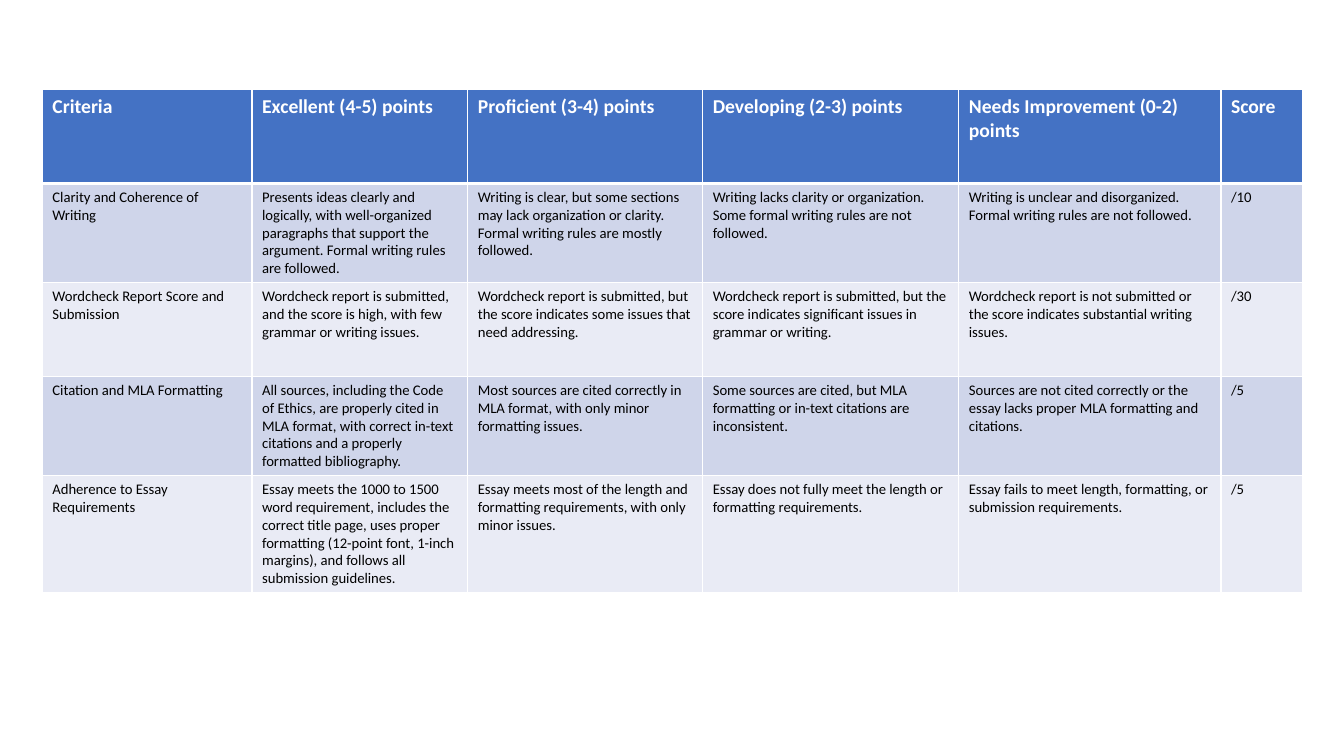
from dataclasses import dataclass

from lxml import etree
from pptx import Presentation
from pptx.dml.color import RGBColor
from pptx.oxml.ns import qn
from pptx.util import Inches, Pt

HEADER = ["Criteria", "Excellent (4-5) points", "Proficient (3-4) points",
          "Developing (2-3) points", "Needs Improvement (0-2) points", "Score"]
CRITERIA = [
    ["Clarity and Coherence of Writing",
     "Presents ideas clearly and logically, with well-organized paragraphs that "
     "support the argument. Formal writing rules are followed.",
     "Writing is clear, but some sections may lack organization or clarity. "
     "Formal writing rules are mostly followed.",
     "Writing lacks clarity or organization. Some formal writing rules are not followed.",
     "Writing is unclear and disorganized. Formal writing rules are not followed.",
     "/10"],
    ["Wordcheck Report Score and Submission",
     "Wordcheck report is submitted, and the score is high, with few grammar or "
     "writing issues.",
     "Wordcheck report is submitted, but the score indicates some issues that "
     "need addressing.",
     "Wordcheck report is submitted, but the score indicates significant issues "
     "in grammar or writing.",
     "Wordcheck report is not submitted or the score indicates substantial "
     "writing issues.",
     "/30"],
    ["Citation and MLA Formatting",
     "All sources, including the Code of Ethics, are properly cited in MLA format, "
     "with correct in-text citations and a properly formatted bibliography.",
     "Most sources are cited correctly in MLA format, with only minor formatting issues.",
     "Some sources are cited, but MLA formatting or in-text citations are inconsistent.",
     "Sources are not cited correctly or the essay lacks proper MLA formatting "
     "and citations.",
     "/5"],
    ["Adherence to Essay Requirements",
     "Essay meets the 1000 to 1500 word requirement, includes the correct title "
     "page, uses proper formatting (12-point font, 1-inch margins), and follows "
     "all submission guidelines.",
     "Essay meets most of the length and formatting requirements, with only minor issues.",
     "Essay does not fully meet the length or formatting requirements.",
     "Essay fails to meet length, formatting, or submission requirements.",
     "/5"],
]
COL_WIDTHS = [2.08, 2.14, 2.33, 2.54, 2.6, 0.81]
ROW_HEIGHTS = [0.93] * 4 + [0.51]


@dataclass(frozen=True)
class Theme:
    font: str = "Calibri"
    header_fill: str = "4472C4"
    bands: tuple = ("CFD5EA", "E9EBF5")
    header_text: str = "FFFFFF"
    body_text: str = "000000"
    border: str = "FFFFFF"
    header_size: float = 14
    body_size: float = 10.5
    thin: float = 1
    thick: float = 3


class SlideBuilder:
    def __init__(self, slide, theme):
        self.s = slide
        self.theme = theme

    def table(self, rows, left, top, width, height):
        frame = self.s.shapes.add_table(
            len(rows), len(rows[0]), Inches(left), Inches(top),
            Inches(width), Inches(height))
        table = frame.table
        for column, w in zip(table.columns, COL_WIDTHS):
            column.width = Inches(w)
        for row, h in zip(table.rows, ROW_HEIGHTS):
            row.height = Inches(h)
        frame.height = Inches(height)
        for i, texts in enumerate(rows):
            for j, text in enumerate(texts):
                self.cell(table.cell(i, j), text, i)

    def cell(self, cell, text, row):
        t = self.theme
        header = row == 0
        self.borders(cell, {
            "lnL": t.thin, "lnR": t.thin,
            "lnT": t.thick if row == 1 else t.thin,
            "lnB": t.thick if header else t.thin})
        cell.fill.solid()
        cell.fill.fore_color.rgb = RGBColor.from_string(
            t.header_fill if header else t.bands[(row - 1) % 2])
        r = cell.text_frame.paragraphs[0].add_run()
        r.text = text
        font_format = {"name": t.font, "bold": header,
                       "size": Pt(t.header_size if header else t.body_size)}
        for name, value in font_format.items():
            setattr(r.font, name, value)
        r.font.color.rgb = RGBColor.from_string(
            t.header_text if header else t.body_text)

    def borders(self, cell, widths):
        """Draw cell edges; widths maps each edge tag to points."""
        tc_pr = cell._tc.get_or_add_tcPr()
        for tag, width in widths.items():
            ln = etree.SubElement(tc_pr, qn(f"a:{tag}"), w=str(Pt(width)))
            fill = etree.SubElement(ln, qn("a:solidFill"))
            etree.SubElement(fill, qn("a:srgbClr"), val=self.theme.border)


def main():
    prs = Presentation()
    prs.slide_width = Inches(13.33)
    prs.slide_height = Inches(7.5)
    s = prs.slides.add_slide(prs.slide_layouts[6])
    SlideBuilder(s, Theme()).table([HEADER] + CRITERIA, 0.42, 0.89, 12.5, 4.97)
    prs.save("out.pptx")


if __name__ == "__main__":
    main()
